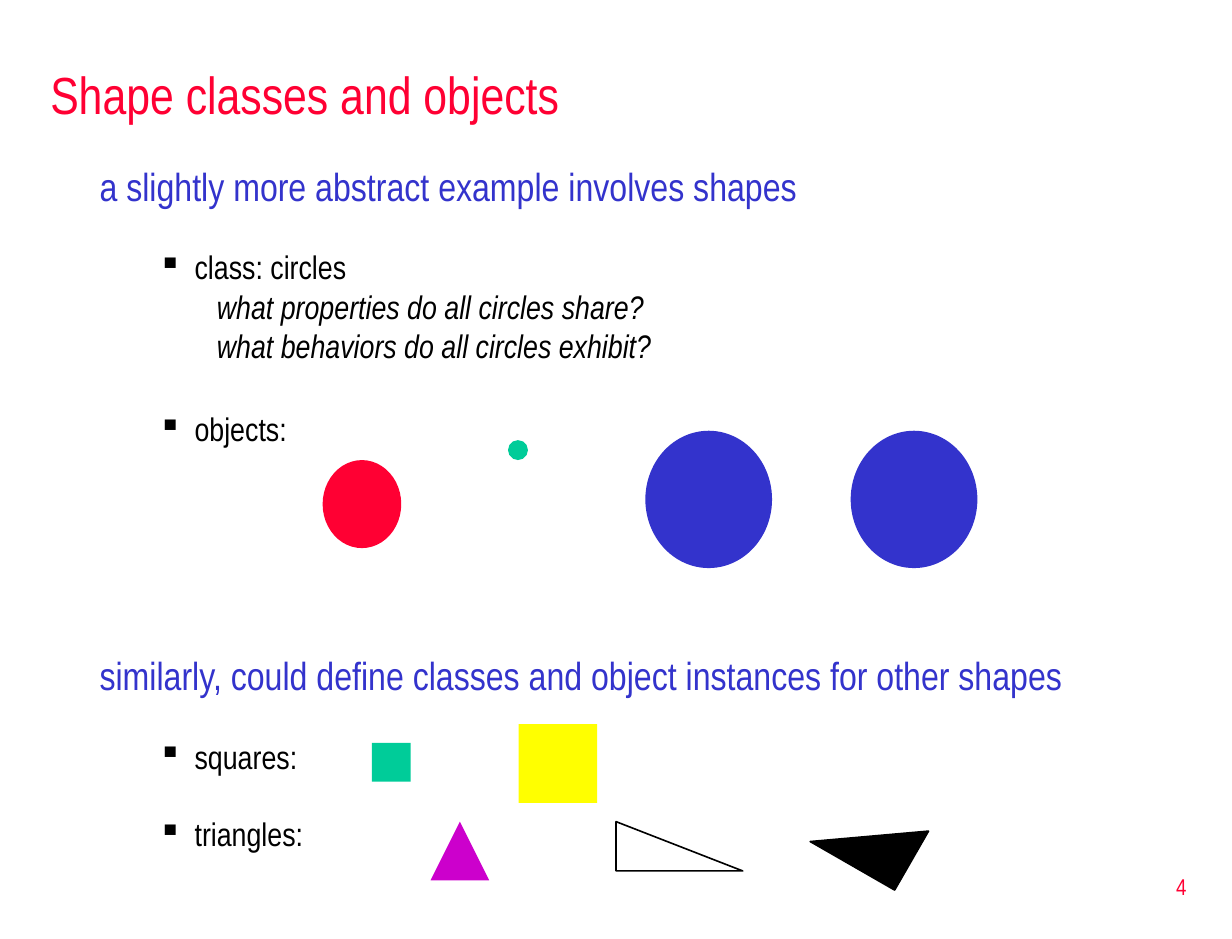
from lxml import etree
from pptx import Presentation
from pptx.dml.color import RGBColor
from pptx.enum import shapes, text
from pptx.oxml.ns import qn
from pptx.util import Inches, Pt

RED = RGBColor(0xFF, 0x00, 0x33)
BLUE = RGBColor(0x33, 0x33, 0xCC)
GREEN = RGBColor(0x00, 0xCC, 0x99)
YELLOW = RGBColor(0xFF, 0xFF, 0x00)
PURPLE = RGBColor(0xCC, 0x00, 0xCC)
BLACK = RGBColor(0x00, 0x00, 0x00)
WHITE = RGBColor(0xFF, 0xFF, 0xFF)

FONT = "Arial Narrow"
NEAR, FAR = 5, 28.3  # points before a line that follows on, or opens a group
KIND = shapes.MSO_SHAPE
MID = text.MSO_ANCHOR.MIDDLE


def add_box(slide, x, y, w, h, anchor=text.MSO_ANCHOR.TOP):
    frame = slide.shapes.add_textbox(*map(Inches, (x, y, w, h))).text_frame
    frame.word_wrap = True
    frame.vertical_anchor = anchor
    return frame


def add_line(frame, words, size, color, before=0):
    """Fill the empty first paragraph, or append a new one."""
    para = frame.paragraphs[0]
    if para.runs:
        para = frame.add_paragraph()
    para.text = words
    para.space_before = Pt(before)
    font = para.font
    font.name, font.size, font.color.rgb = FONT, Pt(size), color
    return para


def indent(para, left, first):
    props = para._p.get_or_add_pPr()
    props.set("marL", str(Inches(left)))
    props.set("indent", str(Inches(first)))
    return props


def add_head(frame, words):
    indent(add_line(frame, words, 24, BLUE), 0.38, -0.38)


def add_item(frame, words, before=FAR):
    para = add_line(frame, words, 20, BLACK, before)
    para.line_spacing = 0.8
    props = indent(para, 0.81, -0.31)
    bullet = etree.Element(qn("a:buChar"), char="▪")
    props.find(qn("a:spcBef")).addnext(bullet)


def add_ask(frame, words):
    para = add_line(frame, words, 20, BLACK, NEAR)
    para.line_spacing = 0.8
    para.font.italic = True
    indent(para, 1.25, -0.25)


def add_form(slide, kind, x, y, w, h, fill, line=None, turn=0):
    form = slide.shapes.add_shape(kind, *map(Inches, (x, y, w, h)))
    form.shadow.inherit = False
    form.rotation = turn
    form.fill.solid()
    form.fill.fore_color.rgb = fill
    if line is None:
        form.line.fill.background()
    else:
        form.line.color.rgb = line
        form.line.width = Pt(1)


def add_circles(slide):
    add_form(slide, KIND.OVAL, 2.75, 3.92, 0.67, 0.75, RED)
    add_form(slide, KIND.OVAL, 4.33, 3.75, 0.17, 0.17, GREEN)
    for x in (5.5, 7.25):
        add_form(slide, KIND.OVAL, x, 3.67, 1.08, 1.17, BLUE)


def add_others(slide):
    add_form(slide, KIND.RECTANGLE, 3.17, 6.33, 0.33, 0.33, GREEN)
    add_form(slide, KIND.RECTANGLE, 4.42, 6.17, 0.67, 0.67, YELLOW)
    add_form(slide, KIND.ISOSCELES_TRIANGLE, 3.67, 7, 0.5, 0.5, PURPLE)
    add_form(slide, KIND.RIGHT_TRIANGLE, 5.25, 7, 1.08, 0.42, WHITE, BLACK)
    add_form(slide, KIND.RIGHT_TRIANGLE, 7.12, 6.71, 0.58, 0.83,
             BLACK, BLACK, 299.9)


def main():
    deck = Presentation()
    deck.slide_width, deck.slide_height = Inches(10.5), Inches(8)
    slide = deck.slides.add_slide(deck.slide_layouts[6])

    page = add_box(slide, 8.02, 7.29, 2.19, 0.53, MID)
    add_line(page, "4", 14, RED).alignment = text.PP_ALIGN.RIGHT
    title = add_box(slide, 0.33, 0.42, 9.92, 0.75, MID)
    add_line(title, "Shape classes and objects", 32, RED)

    intro = add_box(slide, 0.75, 1.33, 9.52, 1.92)
    add_head(intro, "a slightly more abstract example involves shapes")
    add_item(intro, "class: circles")
    add_ask(intro, "what properties do all circles share?")
    add_ask(intro, "what behaviors do all circles exhibit?")

    add_item(add_box(slide, 0.75, 3.5, 9.52, 1.33), "objects:", 0)
    add_circles(slide)

    more = add_box(slide, 0.75, 5.5, 9.52, 1.92)
    add_head(more, "similarly, could define classes and object instances "
                   "for other shapes")
    add_item(more, "squares:")
    add_item(more, "triangles:")
    add_others(slide)

    deck.save("out.pptx")


if __name__ == "__main__":
    main()
